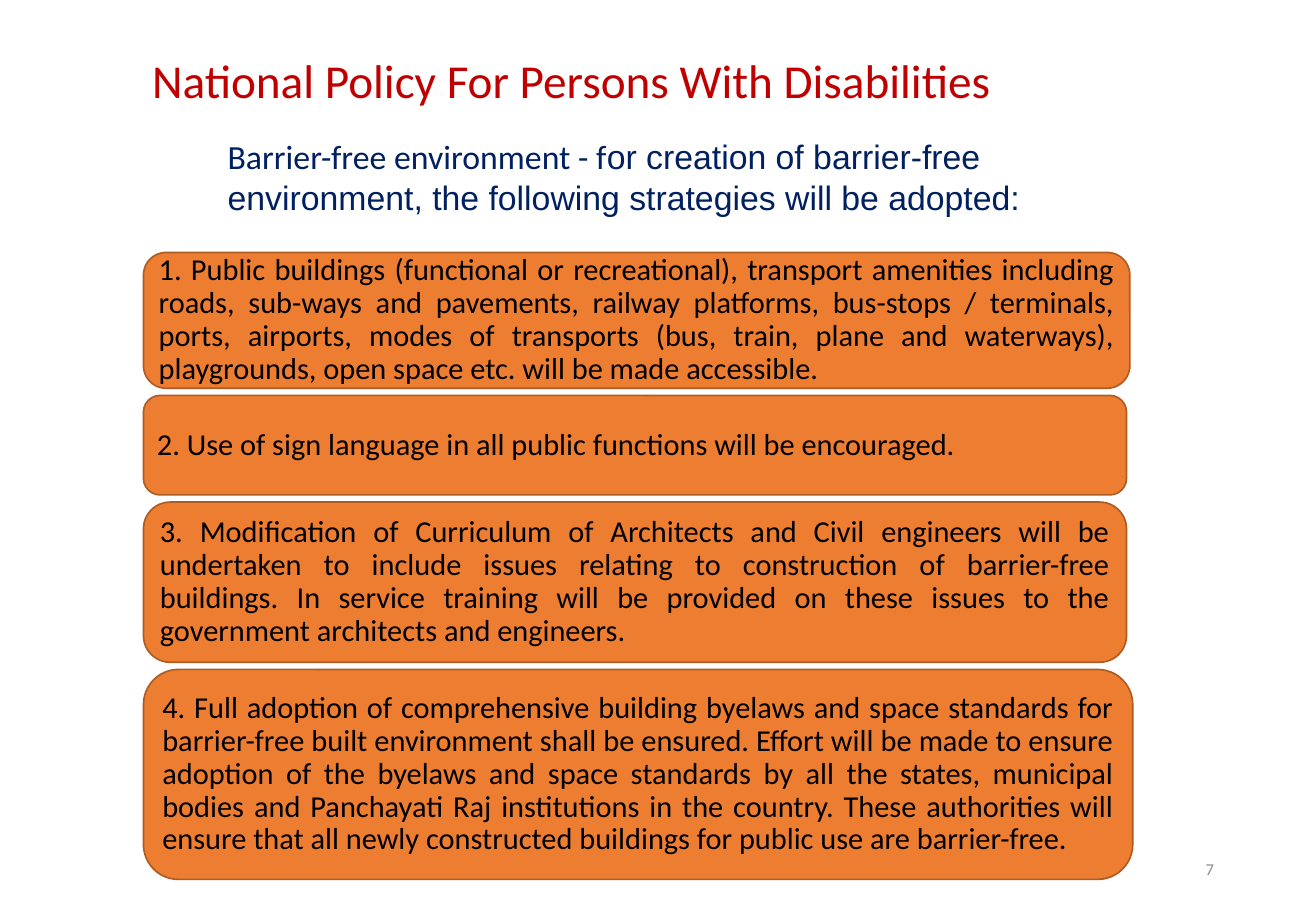
"""Build the slide on the national policy strategies for a barrier-free environment."""
import dataclasses

import pptx
import pptx.dml.color
import pptx.enum.shapes
import pptx.enum.text
import pptx.util
from pptx.util import Cm

ALIGN = pptx.enum.text.PP_ALIGN
ANCHOR = pptx.enum.text.MSO_ANCHOR


@dataclasses.dataclass(frozen=True)
class Theme:
    """Hold the colours, fonts and type sizes of the slide."""
    heading: str = "C00000"
    intro: str = "002060"
    body: str = "000000"
    number: str = "8C8C8C"
    card: str = "ED7D31"
    card_edge: str = "AF5C24"
    font: str = "Calibri"
    intro_font: str = "Arial"
    heading_size: float = 28
    intro_size: float = 20
    body_size: float = 18
    number_size: float = 9.8


THEME = Theme()

STRATEGIES = [
    (20.62, 2.84, "1. Public buildings (functional or recreational), transport amenities "
     "including roads, sub-ways and pavements, railway platforms, bus-stops / terminals, "
     "ports, airports, modes of transports (bus, train, plane and waterways), playgrounds, "
     "open space etc. will be made accessible."),
    (20.55, 2.08, "2. Use of sign language in all public functions will be encouraged."),
    (20.55, 3.35, "3. Modification of Curriculum of Architects and Civil engineers will be "
     "undertaken to include issues relating to construction of barrier-free buildings. In "
     "service training will be provided on these issues to the government architects and "
     "engineers."),
    (20.68, 4.39, "4. Full adoption of comprehensive building byelaws and space standards for "
     "barrier-free built environment shall be ensured. Effort will be made to ensure adoption "
     "of the byelaws and space standards by all the states, municipal bodies and Panchayati "
     "Raj institutions in the country. These authorities will ensure that all newly "
     "constructed buildings for public use are barrier-free."),
]
CARD_LEFT, CARD_TOP, CARD_GAP = 3.0, 5.28, 0.15


def rgb(value):
    """Turn a hex string into a colour."""
    return pptx.dml.color.RGBColor.from_string(value)


def write(shape, *texts, size, color, fonts=(THEME.font,), align=ALIGN.LEFT,
          anchor=ANCHOR.MIDDLE, margins=(0, 0), spacing=1.0):
    """Write one paragraph, with one run for each text and its font."""
    frame = shape.text_frame
    frame.word_wrap = True
    frame.auto_size = pptx.enum.text.MSO_AUTO_SIZE.NONE
    frame.vertical_anchor = anchor
    frame.margin_left = frame.margin_right = Cm(margins[0])
    frame.margin_top = frame.margin_bottom = Cm(margins[1])
    paragraph = frame.paragraphs[0]
    paragraph.alignment = align
    paragraph.line_spacing = spacing
    for text, font in zip(texts, fonts):
        run = paragraph.add_run()
        run.text = text
        run.font.name = font
        run.font.size = pptx.util.Pt(size)
        run.font.color.rgb = rgb(color)


def add_heading(slide):
    """Place and format the title."""
    heading = slide.shapes.title
    heading.left, heading.top = Cm(3.18), Cm(1.0)
    heading.width, heading.height = Cm(20.75), Cm(1.35)
    write(heading, "National Policy For Persons With Disabilities",
          size=THEME.heading_size, color=THEME.heading)


def add_intro(slide):
    """Add the lead-in sentence under the title."""
    intro = slide.shapes.add_textbox(Cm(4.76), Cm(2.84), Cm(19.17), Cm(1.75))
    write(intro, "Barrier-free environment - f",
          "or creation of barrier-free environment, the following strategies will be adopted:",
          size=THEME.intro_size, color=THEME.intro,
          fonts=(THEME.font, THEME.intro_font), anchor=ANCHOR.TOP)


def add_strategy(slide, top, width, height, text):
    """Add one rounded card with a strategy."""
    card = slide.shapes.add_shape(pptx.enum.shapes.MSO_SHAPE.ROUNDED_RECTANGLE,
                                  Cm(CARD_LEFT), Cm(top), Cm(width), Cm(height))
    card.shadow.inherit = False
    card.fill.solid()
    card.fill.fore_color.rgb = rgb(THEME.card)
    card.line.color.rgb = rgb(THEME.card_edge)
    card.line.width = pptx.util.Pt(1)
    write(card, text, size=THEME.body_size, color=THEME.body, align=ALIGN.JUSTIFY,
          margins=(0.18, 0.1), spacing=0.9)


def add_page_number(slide):
    """Add the page number at the lower right."""
    number = slide.shapes.add_textbox(Cm(19.43), Cm(17.65), Cm(6.2), Cm(1.02))
    write(number, "7", size=THEME.number_size, color=THEME.number, align=ALIGN.RIGHT,
          margins=(0.25, 0.13))


def main():
    """Build and save the slide."""
    deck = pptx.Presentation()
    deck.slide_width, deck.slide_height = Cm(27.51), Cm(19.05)
    slide = deck.slides.add_slide(deck.slide_layouts.get_by_name("Title Only"))
    add_heading(slide)
    add_intro(slide)
    top = CARD_TOP
    for width, height, text in STRATEGIES:
        add_strategy(slide, top, width, height, text)
        top += height + CARD_GAP
    add_page_number(slide)
    deck.save("out.pptx")


if __name__ == "__main__":
    main()
